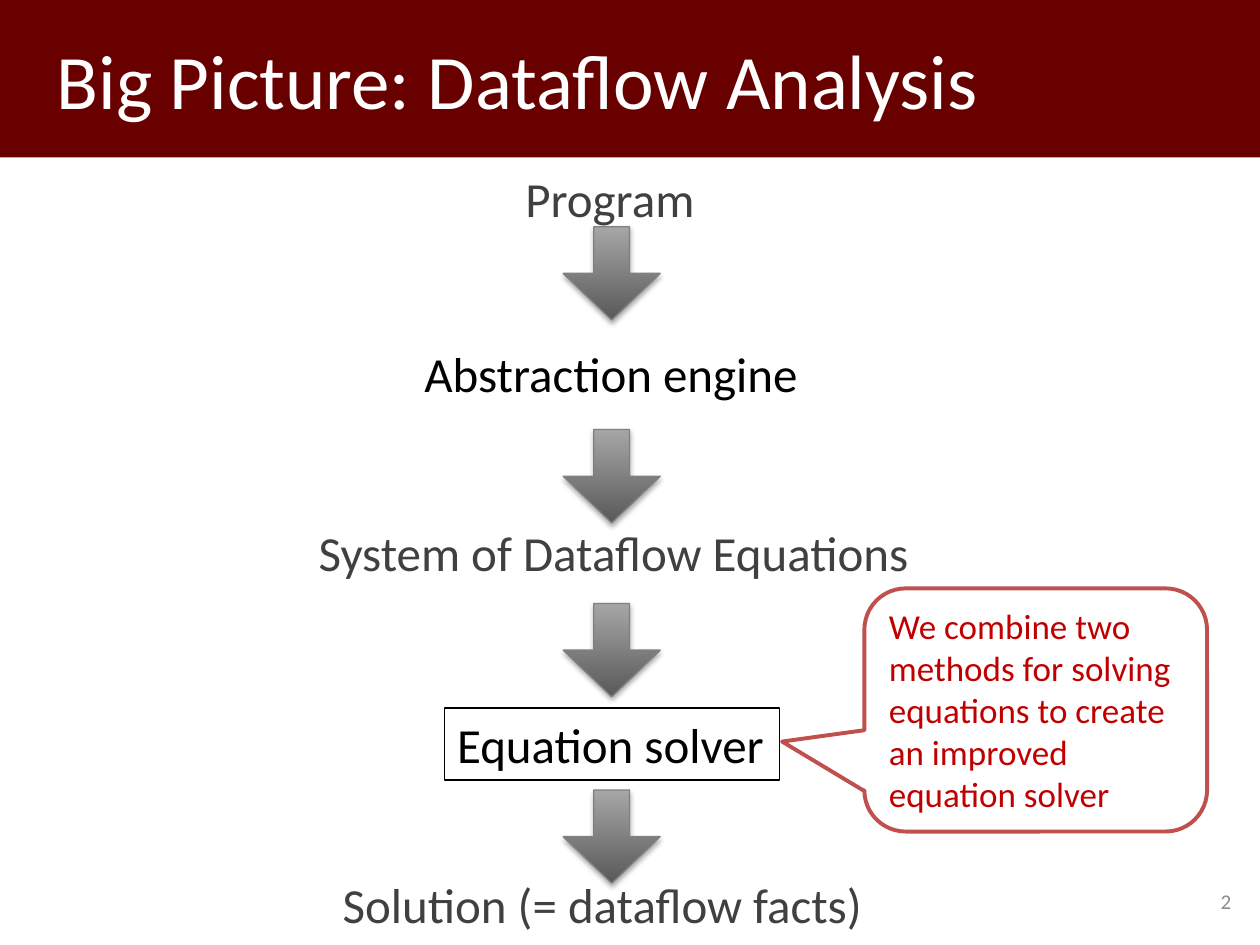
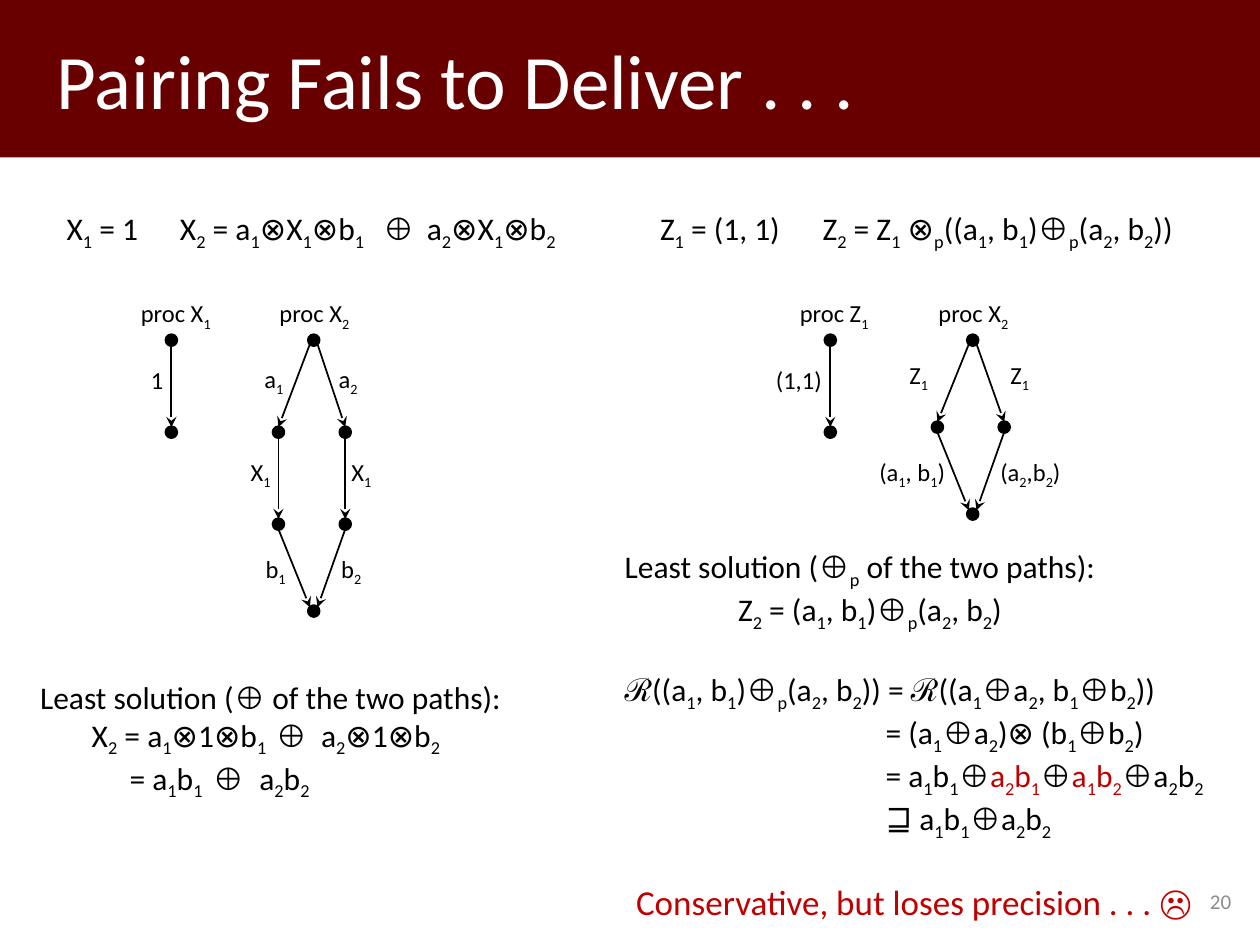
from itertools import accumulate, groupby, pairwise

from lxml.etree import SubElement
from pptx import Presentation
from pptx.dml.color import RGBColor
from pptx.enum.shapes import MSO_CONNECTOR, MSO_SHAPE
from pptx.enum.text import MSO_ANCHOR, MSO_AUTO_SIZE, PP_ALIGN
from pptx.oxml.ns import qn
from pptx.util import Inches, Pt

COLS, ROWS = 100, 75  # grid of square cells over the slide
CELL = Inches(0.1)
FONT, SYMBOL_FONT = "Calibri", "Times New Roman"
SYMBOLS = "⊕ℛ⊒"
COLORS = {
    "band": "690000", "white": "FFFFFF", "black": "000000", "stage": "404040",
    "alert": "C00000", "callout": "C0504D", "number": "8C8C8C",
    "arrow_edge": "808080", "arrow_dark": "595959", "arrow_light": "A6A6A6",
}
NODE = 0.8
DIAGONAL = 0.3


def color(name):
    return RGBColor.from_string(COLORS[name])


def cells(*lengths):
    return [round(length * CELL) for length in lengths]


def styled_chars(text):
    """Yield (char, subscript, red): _ lowers the next char, braces mark red."""
    sub = red = False
    for char in text:
        if char in "{}":
            red = char == "{"
        elif char == "_":
            sub = True
        else:
            yield char, sub, red
            sub = False


def add_runs(p, text, size, ink):
    def style(item):
        char, sub, red = item
        return char in SYMBOLS, sub, red

    for (symbol, sub, red), group in groupby(styled_chars(text), style):
        r = p.add_run()
        r.text = "".join(char for char, *_ in group)
        r.font.name = SYMBOL_FONT if symbol else FONT
        r.font.size = Pt(size)
        r.font.color.rgb = color("alert" if red else ink)
        if sub:
            r.font._element.set("baseline", "-25000")


def set_tabs(p, tabs):
    tab_list = SubElement(p._p.get_or_add_pPr(), qn("a:tabLst"))
    for tab in tabs:
        SubElement(tab_list, qn("a:tab"), pos=str(cells(tab)[0]), algn="l")


def write(sp, text, size, ink="black", align=PP_ALIGN.LEFT,
          anchor=MSO_ANCHOR.TOP, wrap=True, tabs=()):
    tf = sp.text_frame
    tf.word_wrap = wrap
    tf.vertical_anchor = anchor
    if not wrap:
        tf.auto_size = MSO_AUTO_SIZE.SHAPE_TO_FIT_TEXT
    for i, line in enumerate(text.split("\n")):
        p = tf.paragraphs[0] if i == 0 else tf.add_paragraph()
        p.alignment = align
        if tabs:
            set_tabs(p, tabs)
        add_runs(p, line, size, ink)
    return tf


def add_text(s, at, text, size, **style):
    return write(s.shapes.add_textbox(*cells(*at)), text, size, **style)


def add_shape(s, kind, at, fill=None, line=None, width=0.75):
    sp = s.shapes.add_shape(kind, *cells(*at))
    sp.shadow.inherit = False
    if fill:
        sp.fill.solid()
        sp.fill.fore_color.rgb = color(fill)
    else:
        sp.fill.background()
    if line:
        sp.line.color.rgb = color(line)
        sp.line.width = Pt(width)
    else:
        sp.line.fill.background()
    return sp


def add_slide(prs, title, number):
    s = prs.slides.add_slide(prs.slide_layouts[6])
    band = add_shape(s, MSO_SHAPE.RECTANGLE, (0, 0, COLS, ROWS / 6), "band")
    tf = write(band, title, 44, "white", anchor=MSO_ANCHOR.MIDDLE)
    tf.margin_left = cells(4.5)[0]
    add_text(s, (75.4, 69.5, 23.3, 4), number, 12, ink="number",
             align=PP_ALIGN.RIGHT, anchor=MSO_ANCHOR.MIDDLE)
    return s


def add_stage(s, left, top, text):
    tf = add_text(s, (left, top, 48, 5.4), text, 28, ink="stage")
    tf.margin_left = tf.margin_top = tf.margin_right = tf.margin_bottom = 0


def add_engine(s, at, text, **look):
    write(add_shape(s, MSO_SHAPE.RECTANGLE, at, **look), text, 28, wrap=False)


def add_down_arrow(s, top):
    sp = add_shape(s, MSO_SHAPE.DOWN_ARROW, (44.7, top, 7.7, 7.4),
                   line="arrow_edge")
    sp.adjustments[0], sp.adjustments[1] = 0.37, 0.5
    sp.fill.gradient()
    sp.fill.gradient_angle = 90
    for stop, name in zip(sp.fill.gradient_stops, ("arrow_dark", "arrow_light")):
        stop.color.rgb = color(name)
    effects = sp._element.spPr.find(qn("a:effectLst"))
    shadow = SubElement(effects, qn("a:outerShdw"), blurRad=str(Pt(3.1)),
                        dist=str(Pt(1.8)), dir="5400000", rotWithShape="0")
    ink = SubElement(shadow, qn("a:srgbClr"), val=COLORS["black"])
    SubElement(ink, qn("a:alpha"), val="35000")


def add_callout(s, at, text):
    sp = add_shape(s, MSO_SHAPE.ROUNDED_RECTANGULAR_CALLOUT, at,
                   line="callout", width=2.25)
    for i, value in enumerate((-0.74, 0.13, 0.17)):
        sp.adjustments[i] = value
    write(sp, text, 20, "alert", anchor=MSO_ANCHOR.MIDDLE)


def add_node(s, x, y):
    add_shape(s, MSO_SHAPE.OVAL, (x - NODE / 2, y - NODE / 2, NODE, NODE),
              "black", "black", 2)


def add_edge(s, start, end, fan=0, merge=0):
    """Arrow from node to node; fan and merge give the side (-1, 1) it uses."""
    (x1, y1), (x2, y2) = start, end
    c = s.shapes.add_connector(MSO_CONNECTOR.STRAIGHT, *cells(
        x1 + fan * DIAGONAL, y1 + (DIAGONAL if fan else NODE / 2),
        x2 + merge * DIAGONAL, y2 - (DIAGONAL if merge else NODE / 2)))
    c.line.color.rgb = color("black")
    c.line.width = Pt(1)
    spPr = c._element.spPr
    SubElement(spPr.find(qn("a:ln")), qn("a:tailEnd"), type="stealth")
    SubElement(spPr, qn("a:effectLst"))


def add_single_path(s, x, y, drop):
    add_node(s, x, y)
    add_node(s, x, y + drop)
    add_edge(s, (x, y), (x, y + drop))


def add_two_paths(s, x, y, drops):
    """Two branches that leave one node and meet again after all the drops."""
    top, *middle, bottom = accumulate(drops, initial=y)
    add_node(s, x, top)
    add_node(s, x, bottom)
    for side, shift in ((-1, -2.8), (1, 2.5)):
        branch = [(x + shift, level) for level in middle]
        for point in branch:
            add_node(s, *point)
        stops = [(x, top), *branch, (x, bottom)]
        for start, end in pairwise(stops):
            add_edge(s, start, end, fan=side if start == stops[0] else 0,
                     merge=side if end == stops[-1] else 0)


def add_labels(s, x, labels):
    for left, top, width, text in labels:
        add_text(s, (x + left, top, width, 3.4), text, 14, wrap=False)


def add_procedures(s, x, drops, labels):
    add_single_path(s, x + 3.4, 27, 7.3)
    add_two_paths(s, x + 14.7, 27, drops)
    add_labels(s, x, labels)


def build_big_picture(prs):
    s = add_slide(prs, "Big Picture: Dataflow Analysis", "2")
    for left, top, text in (
            (41.7, 13.4, "Program"),
            (25.3, 41.5, "System of Dataflow Equations"),
            (27.2, 69.4, "Solution (= dataflow facts)")):
        add_stage(s, left, top, text)
    add_engine(s, (32.7, 26.8, 32, 5.7), "Abstraction engine",
               fill="white", line="white", width=3)
    add_engine(s, (35.3, 56.2, 26.6, 5.7), "Equation solver", line="black")
    for top in (18, 34.1, 47.9, 62.7):
        add_down_arrow(s, top)
    add_callout(s, (68.6, 46.7, 27.2, 19.3),
                "We combine two methods for solving equations "
                "to create an improved equation solver")


def build_pairing(prs):
    s = add_slide(prs, "Pairing Fails to Deliver . . .", "20")
    add_procedures(s, 10.2, (7.3, 7.3, 6.9), (
        (0, 23.2, 7.7, "proc X_1"), (11, 23.2, 7.7, "proc X_2"),
        (0.8, 28.5, 3, "1"),
        (9.8, 28.4, 3.6, "a_1"), (15.7, 28.4, 3.6, "a_2"),
        (8.7, 35.8, 3.7, "X_1"), (16.7, 35.8, 3.7, "X_1"),
        (9.9, 43.5, 3.7, "b_1"), (15.9, 43.5, 3.7, "b_2")))
    add_procedures(s, 62.5, (6.9, 6.9), (
        (0, 23.2, 7.7, "proc Z_1"), (11, 23.2, 7.7, "proc X_2"),
        (-1.9, 28.5, 5.7, "(1,1)"),
        (8.7, 28.1, 3.7, "Z_1"), (16.7, 28.1, 3.7, "Z_1"),
        (6.3, 35.8, 7.2, "(a_1, b_1)"), (15.9, 35.8, 6.8, "(a_2,b_2)")))

    for at, tabs, text in (
            ((4.3, 16.1, 44, 4), (9, 25.1, 28.6),
             "X_1 = 1\tX_2 = a_1⊗X_1⊗b_1\t⊕\ta_2⊗X_1⊗b_2"),
            ((51.4, 16.1, 47, 4), (12.9,),
             "Z_1 = (1, 1)\tZ_2 = Z_1 ⊗_p((a_1, b_1)⊕_p(a_2, b_2))"),
            ((2.2, 53.3, 42, 13.1), (4.1, 7.1, 13.7, 17.4, 18.7, 22.3),
             "Least solution (⊕ of the two paths):\n"
             "\tX_2 = a_1⊗1⊗b_1\t⊕\ta_2⊗1⊗b_2\n"
             "\t\t= a_1b_1\t⊕\ta_2b_2"),
            ((48.6, 42.9, 49, 7.8), (9,),
             "Least solution (⊕_p of the two paths):\n"
             "\tZ_2 = (a_1, b_1)⊕_p(a_2, b_2)"),
            ((48.6, 52.7, 51, 14.6), (20.7,),
             "ℛ((a_1, b_1)⊕_p(a_2, b_2)) = ℛ((a_1⊕a_2, b_1⊕b_2))\n"
             "\t= (a_1⊕a_2)⊗ (b_1⊕b_2)\n"
             "\t= a_1b_1⊕{a_2b_1}⊕{a_1b_2}⊕a_2b_2\n"
             "\t⊒ a_1b_1⊕a_2b_2")):
        add_text(s, at, text, 18, tabs=tabs)
    add_text(s, (49.5, 69.4, 47, 4.4),
             "Conservative, but loses precision . . . ☹", 20, ink="alert")


def main():
    prs = Presentation()
    prs.slide_width, prs.slide_height = cells(COLS, ROWS)
    build_big_picture(prs)
    build_pairing(prs)
    prs.save("out.pptx")


if __name__ == "__main__":
    main()
